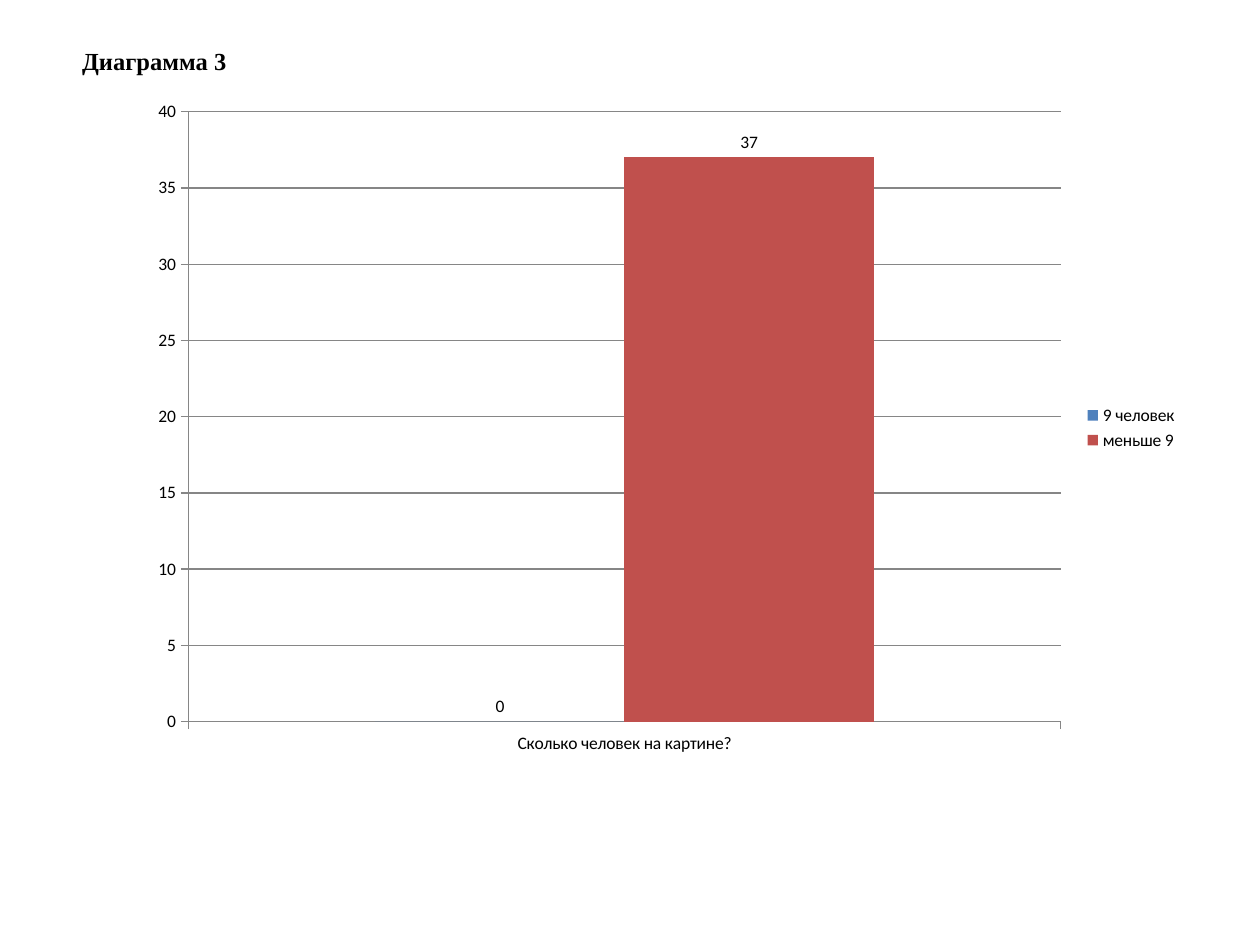
from dataclasses import dataclass

import pptx
import pptx.chart.data
import pptx.dml.color
import pptx.enum.chart
import pptx.enum.text
import pptx.util
from pptx.util import Cm


def rgb(value):
    return pptx.dml.color.RGBColor.from_string(value)


@dataclass(frozen=True)
class Theme:
    text: str = "000000"
    grid: str = "868686"
    series: tuple = ("4F81BD", "C0504D")
    title_font: str = "Times New Roman"
    chart_font: str = "Calibri"
    title_size: int = 14
    chart_size: int = 10


THEME = Theme()
QUESTION = "Сколько человек на картине?"
ANSWERS = {"9 человек": 0, "меньше 9": 37}


def style_font(font, name, size, bold=False):
    font.name = name
    font.size = pptx.util.Pt(size)
    font.bold = bold
    font.color.rgb = rgb(THEME.text)


def style_line(line):
    line.color.rgb = rgb(THEME.grid)
    line.width = pptx.util.Pt(0.75)


def add_title(s, text):
    sp = s.shapes.title
    sp.left, sp.top, sp.width, sp.height = Cm(1.4), Cm(0.79), Cm(24), Cm(0.86)
    tf = sp.text_frame
    tf.word_wrap = True
    tf.auto_size = pptx.enum.text.MSO_AUTO_SIZE.SHAPE_TO_FIT_TEXT
    tf.vertical_anchor = pptx.enum.text.MSO_ANCHOR.MIDDLE
    p = tf.paragraphs[0]
    p.alignment = pptx.enum.text.PP_ALIGN.LEFT
    r = p.add_run()
    r.text = text
    style_font(r.font, THEME.title_font, THEME.title_size, bold=True)


def style_axes(chart):
    for axis in (chart.category_axis, chart.value_axis):
        axis.major_tick_mark = pptx.enum.chart.XL_TICK_MARK.OUTSIDE
        axis.minor_tick_mark = pptx.enum.chart.XL_TICK_MARK.NONE
        style_line(axis.format.line)
    axis = chart.value_axis
    axis.minimum_scale, axis.maximum_scale, axis.major_unit = 0, 40, 5
    axis.has_major_gridlines = True
    style_line(axis.major_gridlines.format.line)


def add_answer_chart(s):
    data = pptx.chart.data.CategoryChartData()
    data.categories = [QUESTION]
    for answer, count in ANSWERS.items():
        data.add_series(answer, [count])
    chart = s.shapes.add_chart(
        pptx.enum.chart.XL_CHART_TYPE.COLUMN_CLUSTERED,
        Cm(2.77), Cm(1.78), Cm(21.23), Cm(13.69), data).chart
    chart.has_title = False
    style_font(chart.font, THEME.chart_font, THEME.chart_size)
    style_axes(chart)

    chart.has_legend = True
    chart.legend.position = pptx.enum.chart.XL_LEGEND_POSITION.RIGHT
    chart.legend.include_in_layout = False

    plot = chart.plots[0]
    plot.vary_by_categories = False
    plot.gap_width, plot.overlap = 150, 0
    for series, color in zip(plot.series, THEME.series):
        series.format.fill.solid()
        series.format.fill.fore_color.rgb = rgb(color)
        labels = series.data_labels
        labels.show_value = True
        labels.position = pptx.enum.chart.XL_LABEL_POSITION.OUTSIDE_END


def main():
    prs = pptx.Presentation()
    prs.slide_width, prs.slide_height = Cm(25.4), Cm(19.05)
    s = prs.slides.add_slide(prs.slide_layouts.get_by_name("Title Only"))
    add_title(s, "Диаграмма 3")
    add_answer_chart(s)
    prs.save("out.pptx")


if __name__ == "__main__":
    main()
